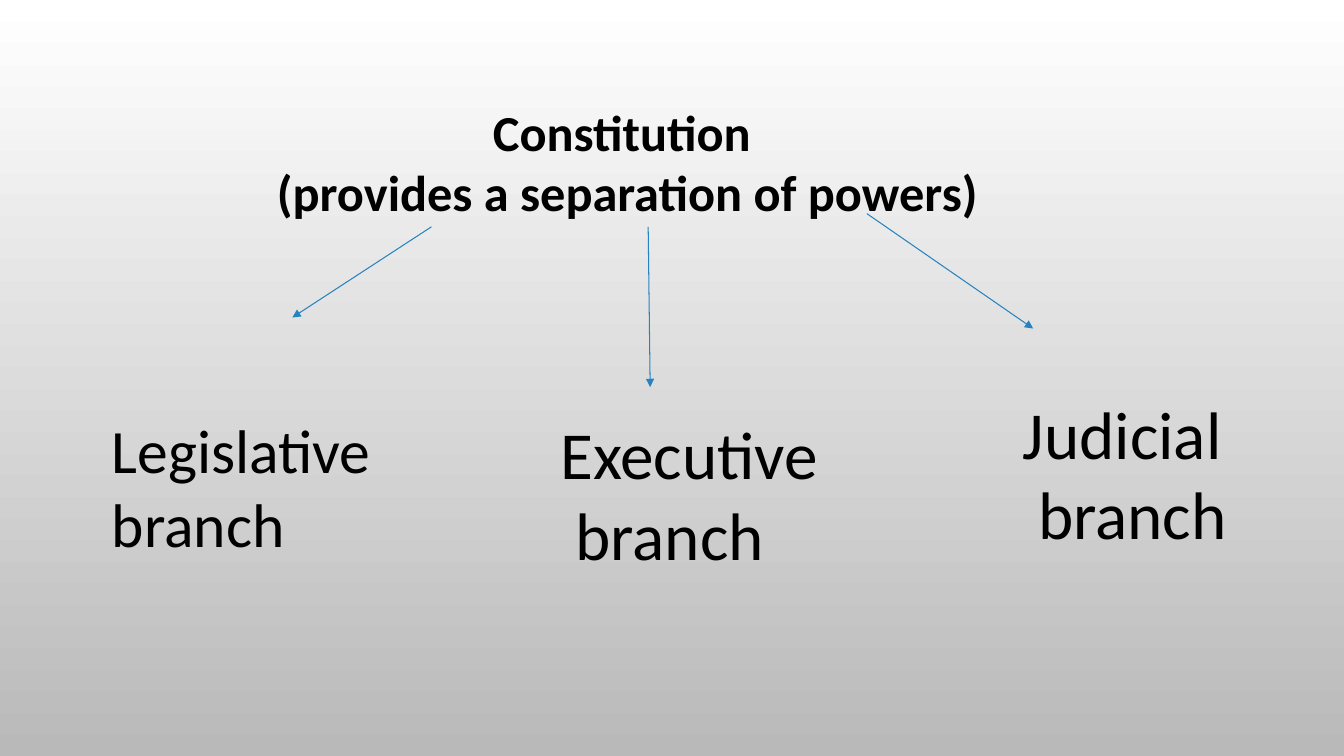
"""Builds a slide on the Constitution and the three branches of power."""
import pptx
import pptx.dml.color
import pptx.enum.shapes
import pptx.enum.text
import pptx.oxml
import pptx.oxml.ns
import pptx.util

Pt = pptx.util.Pt
RGBColor = pptx.dml.color.RGBColor
ALIGN = pptx.enum.text.PP_ALIGN

BLACK = RGBColor(0x00, 0x00, 0x00)
BLUE = RGBColor(0x26, 0x83, 0xBF)
WHITE = RGBColor(0xFF, 0xFF, 0xFF)
GRAY = RGBColor(0xB9, 0xB9, 0xB9)

CONSTITUTION = ["Constitution", " (provides a separation of powers)"]
BRANCHES = [
    {"lines": ["Legislative branch"], "box": (72.7, 290.9, 223.2, 113.8),
     "size": 44, "wrap": True, "arrow": (308.2, 162, 208.8, 226.8)},
    {"lines": ["Executive", " branch"], "box": (393.1, 290.9, 200.9, 123.8),
     "size": 48, "wrap": False, "arrow": (463, 162, 464.4, 276.5)},
    {"lines": ["Judicial", " branch"], "box": (723.6, 276.5, 161.3, 123.8),
     "size": 48, "wrap": False, "arrow": (619.2, 152.6, 738, 234.7)},
]


def add_text(slide, lines, box, size, bold=False, align=ALIGN.LEFT, wrap=False):
    frame = slide.shapes.add_textbox(*map(Pt, box)).text_frame
    frame.word_wrap = wrap
    frame.auto_size = pptx.enum.text.MSO_AUTO_SIZE.SHAPE_TO_FIT_TEXT
    for index, line in enumerate(lines):
        paragraph = frame.add_paragraph() if index else frame.paragraphs[0]
        paragraph.alignment = align
        run = paragraph.add_run()
        run.text = line
        run.font.name = "Calibri"
        run.font.size = Pt(size)
        run.font.bold = bold
        run.font.color.rgb = BLACK


def add_arrow(slide, ends):
    arrow = slide.shapes.add_connector(
        pptx.enum.shapes.MSO_CONNECTOR.STRAIGHT, *map(Pt, ends))
    arrow.line.color.rgb = BLUE
    arrow.line.width = Pt(0.75)
    arrowhead = pptx.oxml.parse_xml(
        f'<a:tailEnd {pptx.oxml.ns.nsdecls("a")} type="triangle"/>')
    arrow.line._get_or_add_ln().append(arrowhead)
    no_shadow = pptx.oxml.parse_xml(f'<a:effectLst {pptx.oxml.ns.nsdecls("a")}/>')
    arrow._element.spPr.append(no_shadow)


def main():
    deck = pptx.Presentation()
    deck.slide_width, deck.slide_height = Pt(960), Pt(540)
    slide = deck.slides.add_slide(deck.slide_layouts[6])

    backdrop = slide.background.fill
    backdrop.gradient()
    backdrop.gradient_angle = 270
    for stop, position, color in zip(backdrop.gradient_stops, (0, 1), (WHITE, GRAY)):
        stop.position = position
        stop.color.rgb = color

    add_text(slide, CONSTITUTION, (175.7, 68.4, 537.1, 94.3), 36,
             bold=True, align=ALIGN.CENTER)
    for branch in BRANCHES:
        add_arrow(slide, branch["arrow"])
        add_text(slide, branch["lines"], branch["box"], branch["size"],
                 wrap=branch["wrap"])
    deck.save("out.pptx")


if __name__ == "__main__":
    main()
